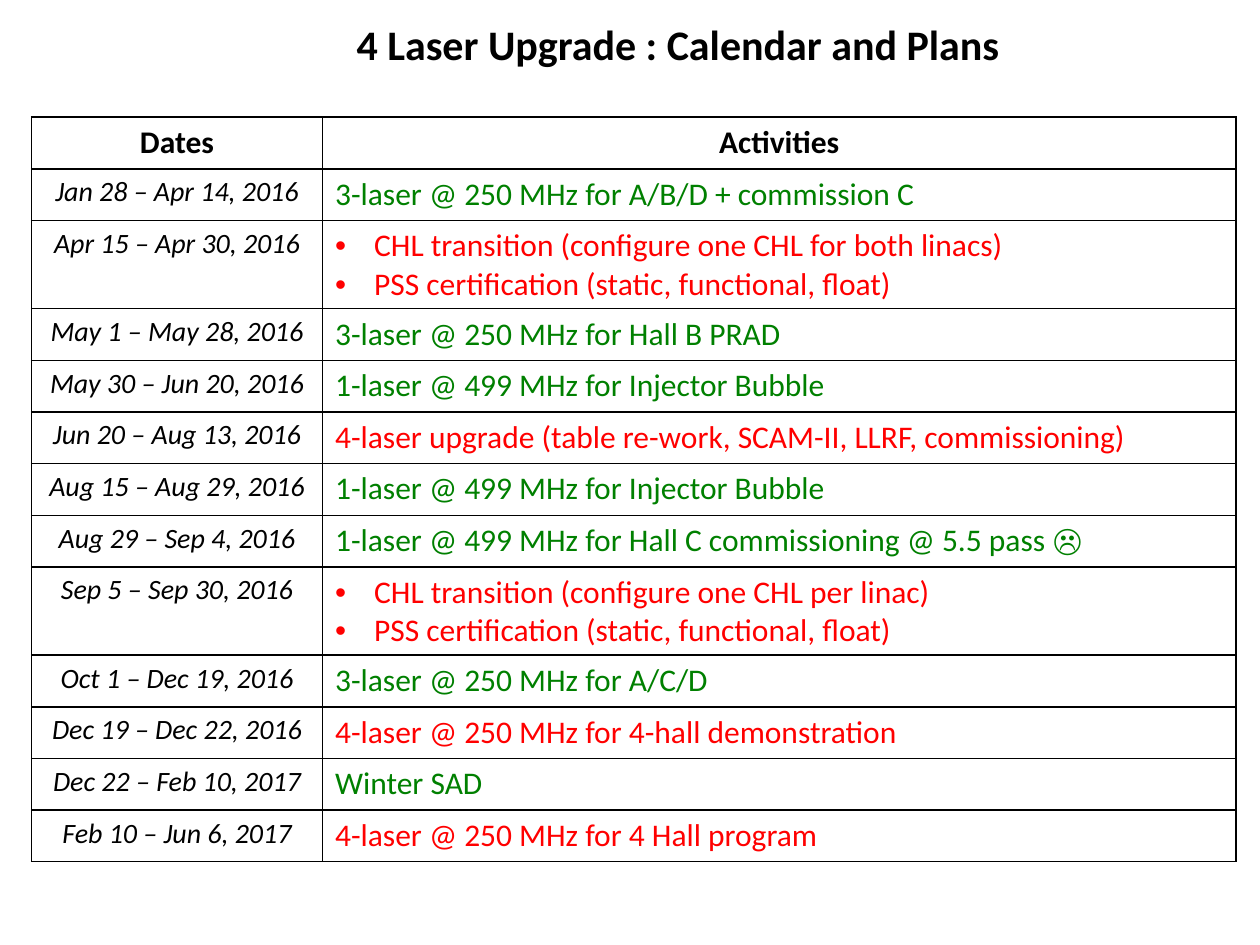
from dataclasses import dataclass

import pptx
import pptx.dml.color
import pptx.enum.text
import pptx.oxml
import pptx.oxml.ns
import pptx.util
from pptx.util import Inches

COLORS = {"text": "000000", "running": "008000", "change": "FF0000"}
FONT = "Calibri"
TITLE_ONLY = 5
COLUMN_WIDTHS = (2.31, 7.25)
ROW_HEIGHT = 0.41
BULLET_INDENT = 0.31
ALIGN = pptx.enum.text.PP_ALIGN


@dataclass(frozen=True)
class Style:
    size: int
    color: str = "text"
    bold: bool = False
    italic: bool = False


@dataclass(frozen=True)
class Period:
    dates: str
    color: str
    activities: tuple[str, ...]


TITLE = Style(24, bold=True)
HEADING = Style(18, bold=True)
DATES = Style(16, italic=True)
CERTIFICATION = "PSS certification (static, functional, float)"

PERIODS = (
    Period("Jan 28 – Apr 14, 2016", "running", ("3-laser @ 250 MHz for A/B/D + commission C",)),
    Period("Apr 15 – Apr 30, 2016", "change",
           ("CHL transition (configure one CHL for both linacs)", CERTIFICATION)),
    Period("May 1 – May 28, 2016", "running", ("3-laser @ 250 MHz for Hall B PRAD",)),
    Period("May 30 – Jun 20, 2016", "running", ("1-laser @ 499 MHz for Injector Bubble",)),
    Period("Jun 20 – Aug 13, 2016", "change",
           ("4-laser upgrade (table re-work, SCAM-II, LLRF, commissioning)",)),
    Period("Aug 15 – Aug 29, 2016", "running", ("1-laser @ 499 MHz for Injector Bubble",)),
    Period("Aug 29 – Sep 4, 2016", "running",
           ("1-laser @ 499 MHz for Hall C commissioning @ 5.5 pass ☹",)),
    Period("Sep 5 – Sep 30, 2016", "change",
           ("CHL transition (configure one CHL per linac)", CERTIFICATION)),
    Period("Oct 1 – Dec 19, 2016", "running", ("3-laser @ 250 MHz for A/C/D",)),
    Period("Dec 19 – Dec 22, 2016", "change", ("4-laser @ 250 MHz for 4-hall demonstration",)),
    Period("Dec 22 – Feb 10, 2017", "running", ("Winter SAD",)),
    Period("Feb 10 – Jun 6, 2017", "change", ("4-laser @ 250 MHz for 4 Hall program",)),
)


def add_span(para, text: str, style: Style) -> None:
    span = para.add_run()
    span.text = text
    font = span.font
    font.name = FONT
    font.size = pptx.util.Pt(style.size)
    font.bold = style.bold
    font.italic = style.italic
    font.color.rgb = pptx.dml.color.RGBColor.from_string(COLORS[style.color])


def add_bullet(para) -> None:
    properties = para._p.get_or_add_pPr()
    indent = Inches(BULLET_INDENT)
    properties.set("marL", str(indent))
    properties.set("indent", str(-indent))
    namespace = pptx.oxml.ns.nsdecls("a")
    properties.append(pptx.oxml.parse_xml(f'<a:buFont {namespace} typeface="Arial"/>'))
    properties.append(pptx.oxml.parse_xml(f'<a:buChar {namespace} char="•"/>'))


def outline_cell(cell) -> None:
    properties = cell._tc.get_or_add_tcPr()
    for side in ("lnL", "lnR", "lnT", "lnB"):
        properties.append(pptx.oxml.parse_xml(
            f'<a:{side} {pptx.oxml.ns.nsdecls("a")} w="{pptx.util.Pt(1)}"><a:solidFill>'
            f'<a:srgbClr val="{COLORS["text"]}"/></a:solidFill></a:{side}>'))
    cell.fill.background()


def fill_cell(cell, lines: tuple[str, ...], style: Style, align: ALIGN) -> None:
    """Write one paragraph per line, bulleted when there are several."""
    outline_cell(cell)
    frame = cell.text_frame
    for index, line in enumerate(lines):
        para = frame.add_paragraph() if index else frame.paragraphs[0]
        para.alignment = align
        if len(lines) > 1:
            add_bullet(para)
        add_span(para, line, style)


def add_title(page) -> None:
    title = page.shapes.title
    title.left, title.top = Inches(2.73), Inches(0.1)
    title.width, title.height = Inches(5.36), Inches(0.5)
    frame = title.text_frame
    frame.word_wrap = False
    frame.auto_size = pptx.enum.text.MSO_AUTO_SIZE.SHAPE_TO_FIT_TEXT
    frame.vertical_anchor = pptx.enum.text.MSO_ANCHOR.TOP
    para = frame.paragraphs[0]
    para.alignment = ALIGN.LEFT
    add_span(para, "4 Laser Upgrade : Calendar and Plans", TITLE)


def add_calendar(page) -> None:
    row_count = len(PERIODS) + 1
    table = page.shapes.add_table(
        row_count, len(COLUMN_WIDTHS), Inches(0.25), Inches(0.93),
        Inches(sum(COLUMN_WIDTHS)), Inches(ROW_HEIGHT * row_count)).table
    table.first_row = table.horz_banding = False
    for column, width in zip(table.columns, COLUMN_WIDTHS):
        column.width = Inches(width)
    for row in table.rows:
        row.height = Inches(ROW_HEIGHT)
    for column, heading in enumerate(("Dates", "Activities")):
        fill_cell(table.cell(0, column), (heading,), HEADING, ALIGN.CENTER)
    for row, period in enumerate(PERIODS, start=1):
        fill_cell(table.cell(row, 0), (period.dates,), DATES, ALIGN.CENTER)
        fill_cell(table.cell(row, 1), period.activities, Style(18, period.color), ALIGN.LEFT)


def main() -> None:
    deck = pptx.Presentation()
    deck.slide_width, deck.slide_height = Inches(10), Inches(7.5)
    page = deck.slides.add_slide(deck.slide_layouts[TITLE_ONLY])
    add_title(page)
    add_calendar(page)
    deck.save("out.pptx")


if __name__ == "__main__":
    main()
